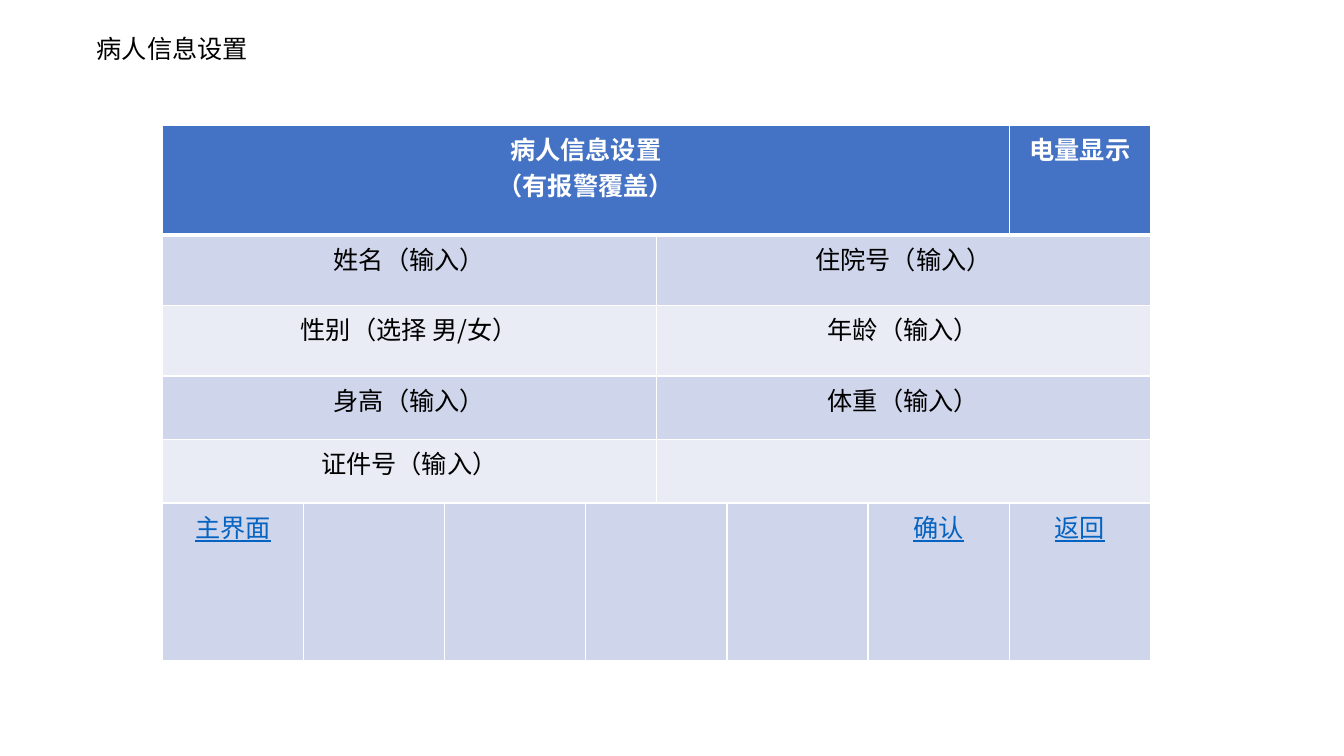
from lxml import etree
from pptx import Presentation
from pptx.dml.color import RGBColor
from pptx.enum import text
from pptx.oxml import ns
from pptx.util import Inches, Pt

FONT = "Noto Sans CJK SC"
BLACK = RGBColor(0x00, 0x00, 0x00)
WHITE = RGBColor(0xFF, 0xFF, 0xFF)
HEADER_BLUE = RGBColor(0x44, 0x72, 0xC4)
DARK_BAND = RGBColor(0xCF, 0xD5, 0xEA)
LIGHT_BAND = RGBColor(0xE9, 0xEB, 0xF5)
LINK_BLUE = RGBColor(0x05, 0x63, 0xC1)

TITLE = "病人信息设置"
# Each cell: (text, number of columns it spans)
ROWS = [
    [("病人信息设置\n（有报警覆盖）", 7), ("电量显示", 1)],
    [("姓名（输入）", 4), ("住院号（输入）", 4)],
    [("性别（选择 男/女）", 4), ("年龄（输入）", 4)],
    [("身高（输入）", 4), ("体重（输入）", 4)],
    [("证件号（输入）", 4), ("", 4)],
    [("主界面", 1), ("", 1), ("", 1), ("", 2), ("", 1), ("确认", 1), ("返回", 1)],
]
ROW_HEIGHTS = [1.09, 0.7, 0.7, 0.63, 0.63, 1.56]
COLUMN_WIDTHS = [1.4, 1.4, 1.4, 0.7, 0.7, 1.4, 1.4, 1.4]


def write(frame, content, align=text.PP_ALIGN.CENTER, color=BLACK, bold=False, underline=False):
    frame.text = content
    for paragraph in frame.paragraphs:
        paragraph.alignment = align
        for run in paragraph.runs:
            font = run.font
            font.size, font.name = Pt(18), FONT
            font.bold, font.underline = bold, underline
            font.color.rgb = color
            east_asian = etree.SubElement(run._r.get_or_add_rPr(), ns.qn("a:ea"))
            east_asian.set("typeface", FONT)


def add_borders(cell, top=1, bottom=1):
    """Draw white borders; must run before the cell is filled."""
    properties = cell._tc.get_or_add_tcPr()
    for side, width in (("L", 1), ("R", 1), ("T", top), ("B", bottom)):
        line = etree.SubElement(properties, ns.qn(f"a:ln{side}"), w=str(Pt(width)))
        fill = etree.SubElement(line, ns.qn("a:solidFill"))
        etree.SubElement(fill, ns.qn("a:srgbClr"), val=str(WHITE))


def add_title(slide):
    title = slide.shapes.title
    title.left, title.top = Inches(0.86), Inches(0.28)
    title.width, title.height = Inches(1.72), Inches(0.4)
    frame = title.text_frame
    write(frame, TITLE, align=text.PP_ALIGN.LEFT)
    frame.word_wrap = False
    frame.auto_size = text.MSO_AUTO_SIZE.SHAPE_TO_FIT_TEXT
    frame.vertical_anchor = text.MSO_ANCHOR.TOP


def add_form(slide):
    table = slide.shapes.add_table(
        len(ROWS), len(COLUMN_WIDTHS), Inches(1.61), Inches(1.24),
        Inches(sum(COLUMN_WIDTHS)), Inches(sum(ROW_HEIGHTS))).table
    for column, width in zip(table.columns, COLUMN_WIDTHS):
        column.width = Inches(width)

    for index, (cells, height) in enumerate(zip(ROWS, ROW_HEIGHTS)):
        table.rows[index].height = Inches(height)
        is_header, is_footer = index == 0, index == len(ROWS) - 1
        band = HEADER_BLUE if is_header else DARK_BAND if index % 2 else LIGHT_BAND
        for cell in table.rows[index].cells:
            add_borders(cell, top=3 if index == 1 else 1, bottom=3 if is_header else 1)
            cell.fill.solid()
            cell.fill.fore_color.rgb = band

        start = 0
        for content, span in cells:
            cell = table.cell(index, start)
            if span > 1:
                cell.merge(table.cell(index, start + span - 1))
            color = WHITE if is_header else LINK_BLUE if is_footer else BLACK
            write(cell.text_frame, content, color=color, bold=is_header, underline=is_footer)
            start += span


def main():
    presentation = Presentation()
    presentation.slide_width, presentation.slide_height = Inches(13.33), Inches(7.5)
    slide = presentation.slides.add_slide(presentation.slide_layouts[5])
    add_title(slide)
    add_form(slide)
    presentation.save("out.pptx")


if __name__ == "__main__":
    main()
